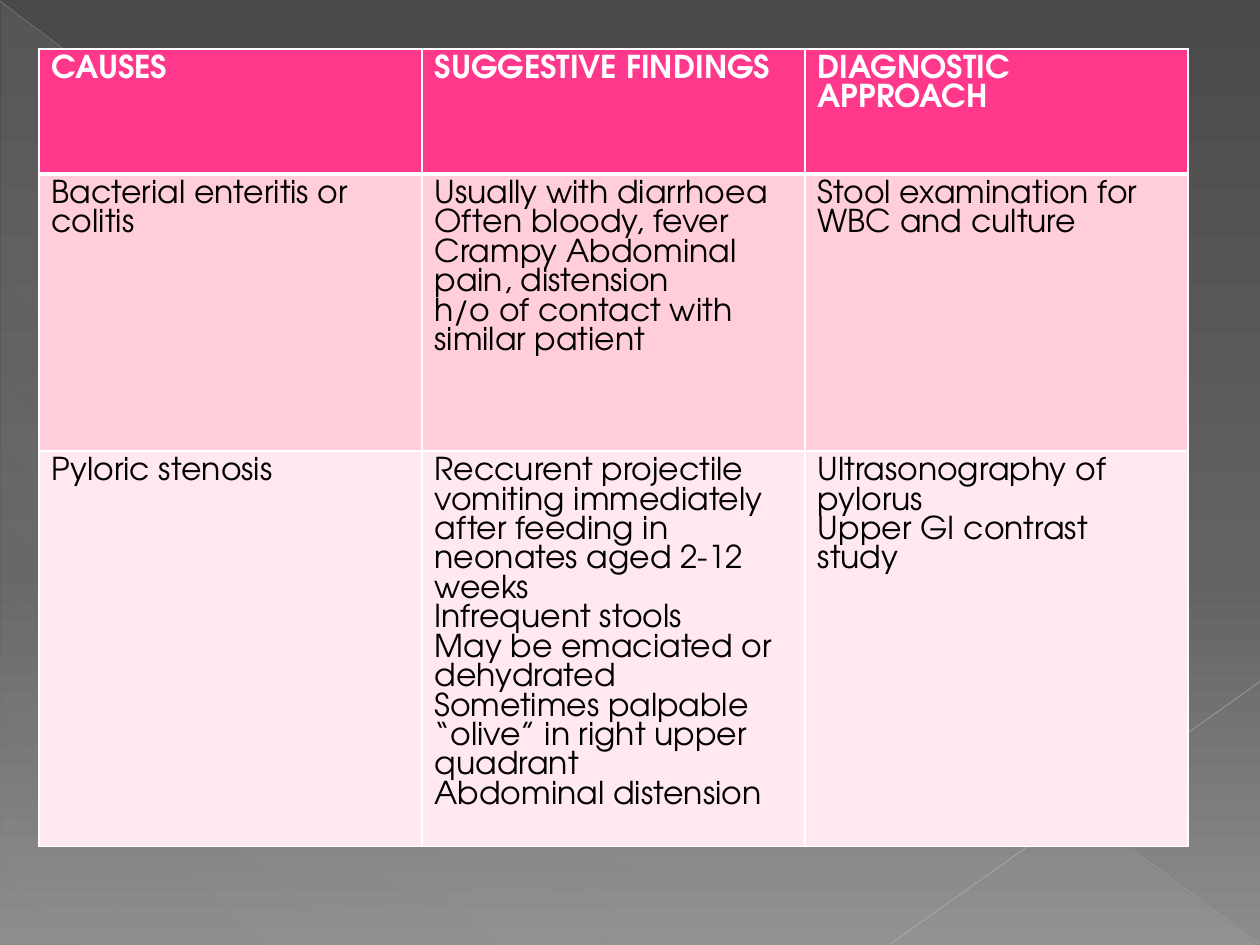
from lxml import etree
from pptx import Presentation
from pptx.dml.color import RGBColor
from pptx.enum.shapes import MSO_CONNECTOR, MSO_SHAPE
from pptx.oxml.ns import qn
from pptx.util import Inches, Pt

RIGHT_TRIANGLE = MSO_SHAPE.RIGHT_TRIANGLE
STRAIGHT = MSO_CONNECTOR.STRAIGHT
FONT = "TeX Gyre Adventor"
WIDTH, HEIGHT = 10, 7.5
COLUMN_WIDTH = 3.04
ROW_HEIGHTS = (0.99, 2.2, 3.14)
ROW_FILLS = ("FF388C", "FFCEDA", "FFE8EE")
RULE_WIDTHS = (1, 3, 1, 1)  # horizontal rules, top to bottom
ROWS = [
    [["CAUSES"], ["SUGGESTIVE FINDINGS"], ["DIAGNOSTIC APPROACH"]],
    [
        ["Bacterial enteritis or colitis"],
        ["Usually with diarrhoea", "Often bloody, fever",
         "Crampy Abdominal pain, distension",
         "h/o of contact with similar patient"],
        ["Stool examination for WBC and culture"],
    ],
    [
        ["Pyloric stenosis"],
        ["Reccurent projectile vomiting immediately after feeding in "
         "neonates aged 2-12 weeks",
         "Infrequent stools", "May be emaciated or dehydrated",
         "Sometimes palpable “olive” in right upper quadrant",
         "Abdominal distension"],
        ["Ultrasonography of pylorus", "Upper GI contrast study"],
    ],
]


def color(hex_string):
    return RGBColor.from_string(hex_string)


def add_color(parent, hex_string, opacity=100):
    element = etree.SubElement(parent, qn("a:srgbClr"), val=hex_string)
    if opacity < 100:
        etree.SubElement(element, qn("a:alpha"), val=str(opacity * 1000))


def set_gradient(fill, owner, stops, angle):
    """Fill with (position, colour, opacity) stops; the angle is clockwise."""
    fill.gradient()
    fill.gradient_angle = 360 - angle
    stop_list = next(owner.iter(qn("a:gsLst")))
    for old_stop in list(stop_list):
        stop_list.remove(old_stop)
    for position, hex_string, opacity in stops:
        stop = etree.SubElement(stop_list, qn("a:gs"), pos=str(position * 1000))
        add_color(stop, hex_string, opacity)


def add_corner_triangle(slide):
    shape = slide.shapes.add_shape(RIGHT_TRIANGLE, Inches(0.01), Inches(0.02),
                                   Inches(WIDTH - 0.02), Inches(HEIGHT - 0.02))
    shape.shadow.inherit = False
    shape.line.fill.background()
    stops = [(0, "D2D2D2", 10), (70, "D2D2D2", 8), (100, "D2D2D2", 1)]
    set_gradient(shape.fill, shape.element, stops, 133)


def add_faint_line(slide, start, end, hex_string, width, opacity):
    points = [Inches(length) for length in (*start, *end)]
    connector = slide.shapes.add_connector(STRAIGHT, *points)
    connector.line.width = Pt(width)
    connector.line.color.rgb = color(hex_string)
    line_color = next(connector.element.iter(qn("a:srgbClr")))
    etree.SubElement(line_color, qn("a:alpha"), val=str(opacity * 1000))
    etree.SubElement(connector.element.spPr, qn("a:effectLst"))


def set_borders(cell, top, bottom):
    properties = cell._tc.get_or_add_tcPr()
    sides = (("L", 1), ("R", 1), ("T", top), ("B", bottom))
    for index, (side, width) in enumerate(sides):
        line = etree.Element(qn(f"a:ln{side}"), w=str(Pt(width)))
        add_color(etree.SubElement(line, qn("a:solidFill")), "FFFFFF")
        properties.insert(index, line)


def fill_cell(cell, lines, fill, text_color, bold):
    cell.fill.solid()
    cell.fill.fore_color.rgb = color(fill)
    cell.text = "\n".join(lines)
    for paragraph in cell.text_frame.paragraphs:
        font = paragraph.font
        font.name, font.size, font.bold = FONT, Pt(18), bold
        font.color.rgb = color(text_color)


def add_causes_table(slide):
    column_count = len(ROWS[0])
    table = slide.shapes.add_table(
        len(ROWS), column_count, Inches(0.31), Inches(0.39),
        Inches(COLUMN_WIDTH * column_count), Inches(sum(ROW_HEIGHTS))).table
    for column in table.columns:
        column.width = Inches(COLUMN_WIDTH)
    for row_index, row in enumerate(ROWS):
        table.rows[row_index].height = Inches(ROW_HEIGHTS[row_index])
        header = row_index == 0
        for column_index, lines in enumerate(row):
            cell = table.cell(row_index, column_index)
            fill_cell(cell, lines, ROW_FILLS[row_index],
                      "FFFFFF" if header else "000000", header)
            set_borders(cell, *RULE_WIDTHS[row_index:row_index + 2])


def main():
    presentation = Presentation()
    presentation.slide_width = Inches(WIDTH)
    presentation.slide_height = Inches(HEIGHT)
    slide = presentation.slides.add_slide(presentation.slide_layouts[6])
    stops = [(0, "4A4A4A", 100), (60, "626262", 100), (100, "8C8C8C", 100)]
    set_gradient(slide.background.fill, slide.element, stops, 90)
    add_corner_triangle(slide)
    add_faint_line(slide, (0, 0.01), (9.99, 7.49), "BFBFBF", 0.39, 35)
    add_faint_line(slide, (10, 5.41), (7.07, 7.49), "C6C6C6", 0.47, 45)
    add_causes_table(slide)
    presentation.save("out.pptx")


if __name__ == "__main__":
    main()
